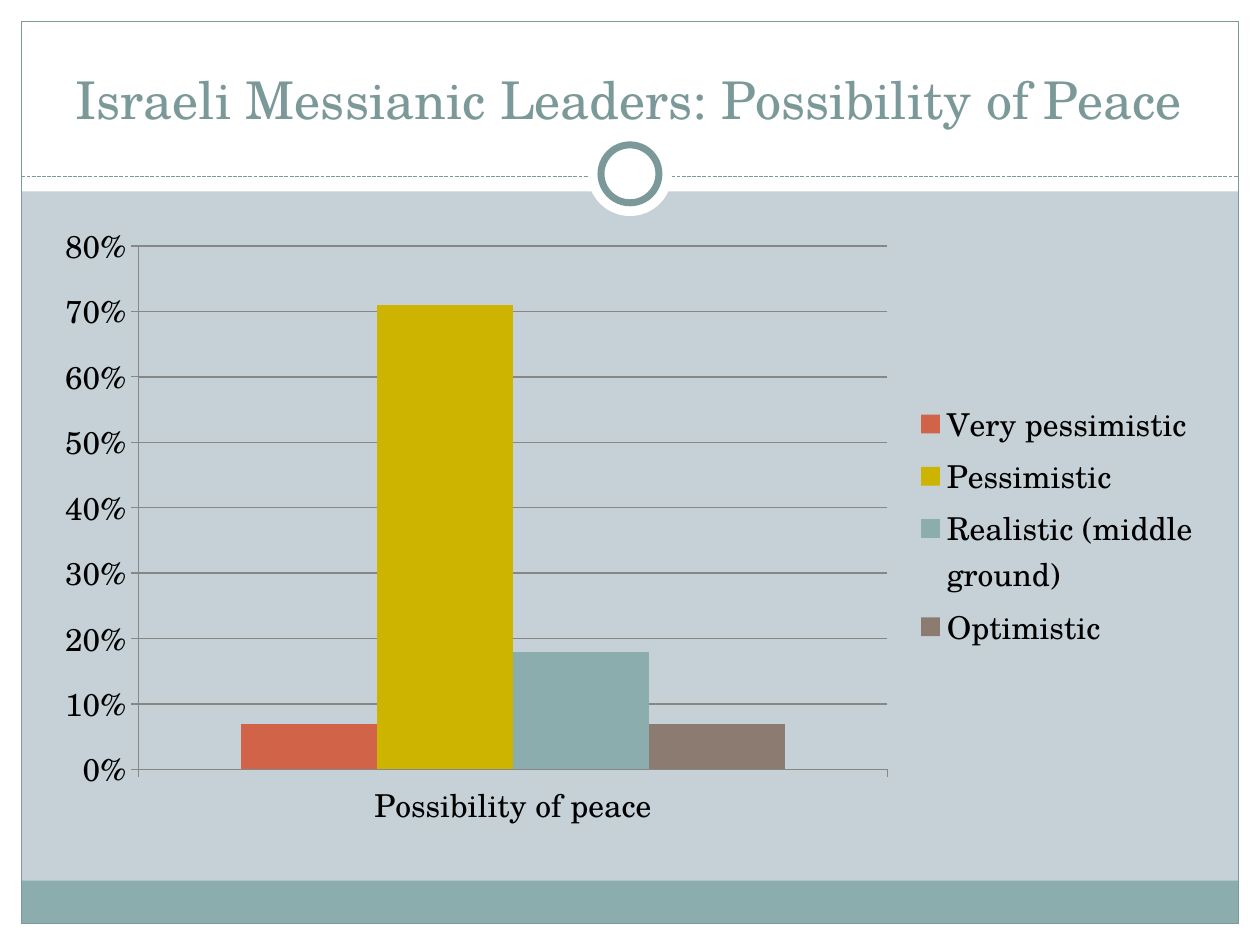
"""Build a slide charting Israeli Messianic leaders' views on the possibility of peace."""
from lxml import etree
from pptx import Presentation
from pptx.chart.data import CategoryChartData
from pptx.dml.color import RGBColor
from pptx.enum.chart import XL_CHART_TYPE, XL_LEGEND_POSITION, XL_TICK_MARK
from pptx.enum.dml import MSO_LINE
from pptx.enum.shapes import MSO_CONNECTOR, MSO_SHAPE
from pptx.enum.text import MSO_ANCHOR, PP_ALIGN
from pptx.oxml.ns import qn
from pptx.util import Inches, Pt

RECT, OVAL = MSO_SHAPE.RECTANGLE, MSO_SHAPE.OVAL
COLUMNS, RIGHT = XL_CHART_TYPE.COLUMN_CLUSTERED, XL_LEGEND_POSITION.RIGHT
OUTSIDE, NO_TICK = XL_TICK_MARK.OUTSIDE, XL_TICK_MARK.NONE
CENTER, BOTTOM = PP_ALIGN.CENTER, MSO_ANCHOR.BOTTOM
FONT = "TeX Gyre Schola"
COLORS = {
    "background": "C5D1D7", "white": "FFFFFF", "band": "8CADAE", "accent": "7C999A",
    "text": "000000", "grid": "878787",
    "red": "D16349", "gold": "CCB400", "teal": "8CADAE", "brown": "8C7B70",
}

TITLE = "Israeli Messianic Leaders: Possibility of Peace"
CATEGORY = "Possibility of peace"
SERIES = [
    ("Very pessimistic", 0.07, "red"),
    ("Pessimistic", 0.71, "gold"),
    ("Realistic (middle ground)", 0.18, "teal"),
    ("Optimistic", 0.07, "brown"),
]

W, H, MARGIN = 10, 7.5, 0.17
HEADER_H, RULE_Y, BAND_H = 1.52, 1.4, 0.34
INNER_W, INNER_H = W - 2 * MARGIN, H - 2 * MARGIN
RING_Y = 1.38
PANELS = [
    (0, H - MARGIN, W, MARGIN, "white"),
    (0, 0, W, HEADER_H, "white"),
    (0, 0, MARGIN, H, "white"),
    (W - MARGIN, 0, MARGIN, H, "white"),
    (MARGIN, H - MARGIN - BAND_H, INNER_W, BAND_H, "band"),
]


def rgb(name):
    return RGBColor.from_string(COLORS[name])


def add_shape(s, kind, x, y, w, h, fill=None, line=None, width=0.75):
    sp = s.shapes.add_shape(kind, Inches(x), Inches(y), Inches(w), Inches(h))
    sp.shadow.inherit = False
    if fill:
        sp.fill.solid()
        sp.fill.fore_color.rgb = rgb(fill)
    else:
        sp.fill.background()
    if line:
        sp.line.color.rgb = rgb(line)
        sp.line.width = Pt(width)
    else:
        sp.line.fill.background()


def add_circle(s, size, **style):
    add_shape(s, OVAL, (W - size) / 2, RING_Y - size / 2, size, size, **style)


def add_rule(s):
    rule = s.shapes.add_connector(MSO_CONNECTOR.STRAIGHT, Inches(MARGIN), Inches(RULE_Y),
                                  Inches(W - MARGIN), Inches(RULE_Y))
    rule.line.color.rgb = rgb("accent")
    rule.line.width = Pt(0.75)
    rule.line.dash_style = MSO_LINE.SQUARE_DOT
    etree.SubElement(rule.line._get_or_add_ln().getparent(), qn("a:effectLst"))


def set_font(font, size, color):
    font.name, font.size = FONT, Pt(size)
    font.color.rgb = rgb(color)


def add_text(s, text, x, y, w, h, size, color, align, anchor):
    tf = s.shapes.add_textbox(Inches(x), Inches(y), Inches(w), Inches(h)).text_frame
    tf.word_wrap = True
    tf.vertical_anchor = anchor
    p = tf.paragraphs[0]
    p.alignment = align
    r = p.add_run()
    r.text = text
    set_font(r.font, size, color)


def add_peace_chart(s):
    data = CategoryChartData(number_format="0%")
    data.categories = [CATEGORY]
    for name, value, _ in SERIES:
        data.add_series(name, [value])
    chart = s.shapes.add_chart(COLUMNS, Inches(0.33), Inches(1.67), Inches(9.3),
                               Inches(5), data).chart
    set_font(chart.font, 18, "text")
    chart.has_title = False
    chart.has_legend = True
    chart.legend.position = RIGHT
    chart.legend.include_in_layout = False
    plot = chart.plots[0]
    plot.gap_width, plot.overlap = 150, 0
    plot.vary_by_categories = False
    for series, (_, _, color) in zip(plot.series, SERIES):
        series.format.fill.solid()
        series.format.fill.fore_color.rgb = rgb(color)
    value_axis = chart.value_axis
    value_axis.minimum_scale, value_axis.maximum_scale, value_axis.major_unit = 0, 0.8, 0.1
    value_axis.tick_labels.number_format = "0%"
    value_axis.tick_labels.number_format_is_linked = False
    value_axis.has_major_gridlines = True
    lines = [value_axis.major_gridlines.format.line]
    for axis in (value_axis, chart.category_axis):
        axis.major_tick_mark, axis.minor_tick_mark = OUTSIDE, NO_TICK
        lines.append(axis.format.line)
    for line in lines:
        line.color.rgb = rgb("grid")
        line.width = Pt(0.75)


def main():
    prs = Presentation()
    prs.slide_width, prs.slide_height = Inches(W), Inches(H)
    s = prs.slides.add_slide(prs.slide_layouts[6])
    s.background.fill.solid()
    s.background.fill.fore_color.rgb = rgb("background")
    for x, y, w, h, fill in PANELS:
        add_shape(s, RECT, x, y, w, h, fill=fill)
    add_shape(s, RECT, MARGIN, MARGIN, INNER_W, INNER_H, line="accent")
    add_rule(s)
    add_circle(s, 0.67, fill="white")
    add_circle(s, 0.46, fill="white", line="accent", width=4)
    add_text(s, TITLE, 0.33, 0.25, 9.33, 0.83, size=29.7, color="accent",
             align=CENTER, anchor=BOTTOM)
    add_peace_chart(s)
    prs.save("out.pptx")


if __name__ == "__main__":
    main()
